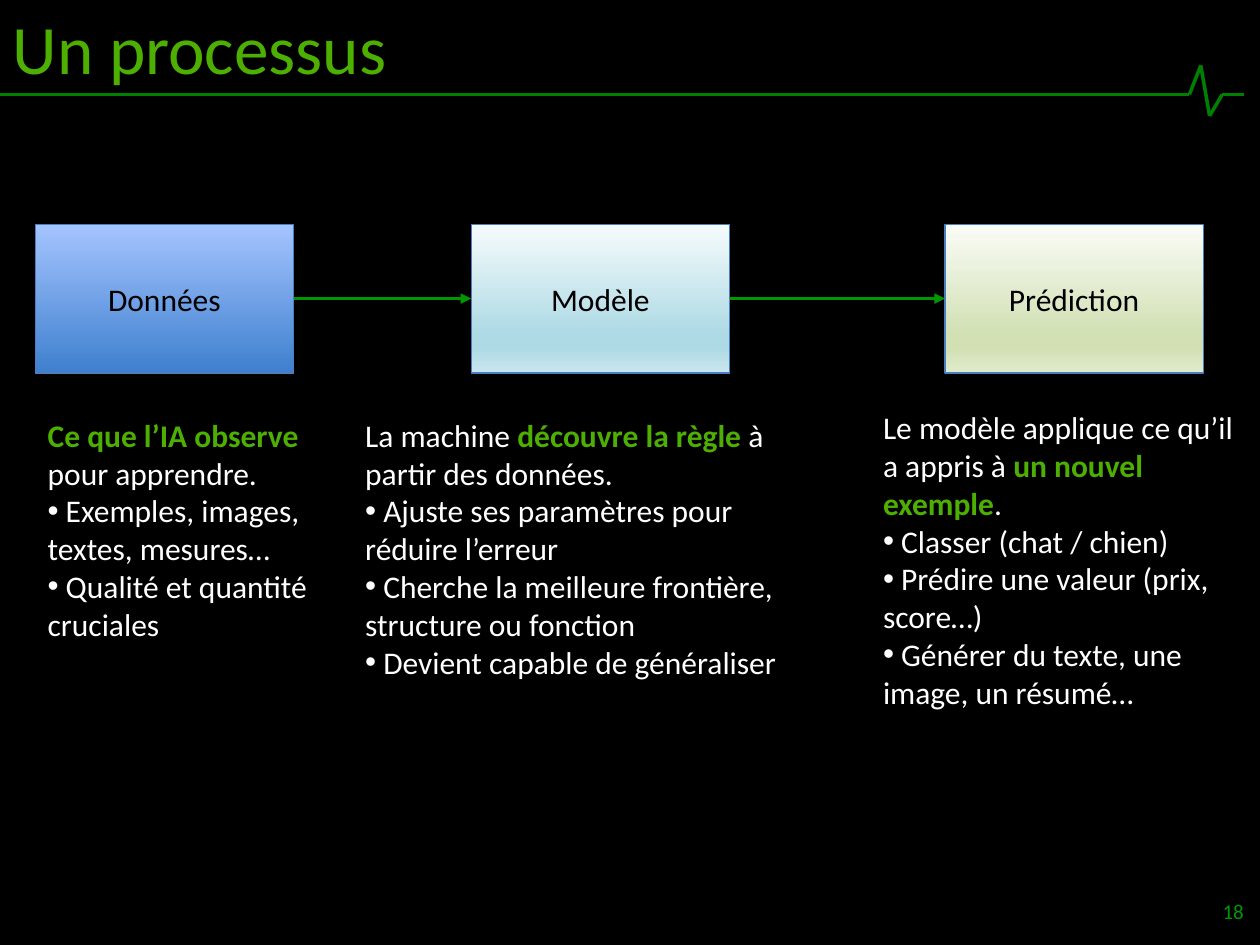
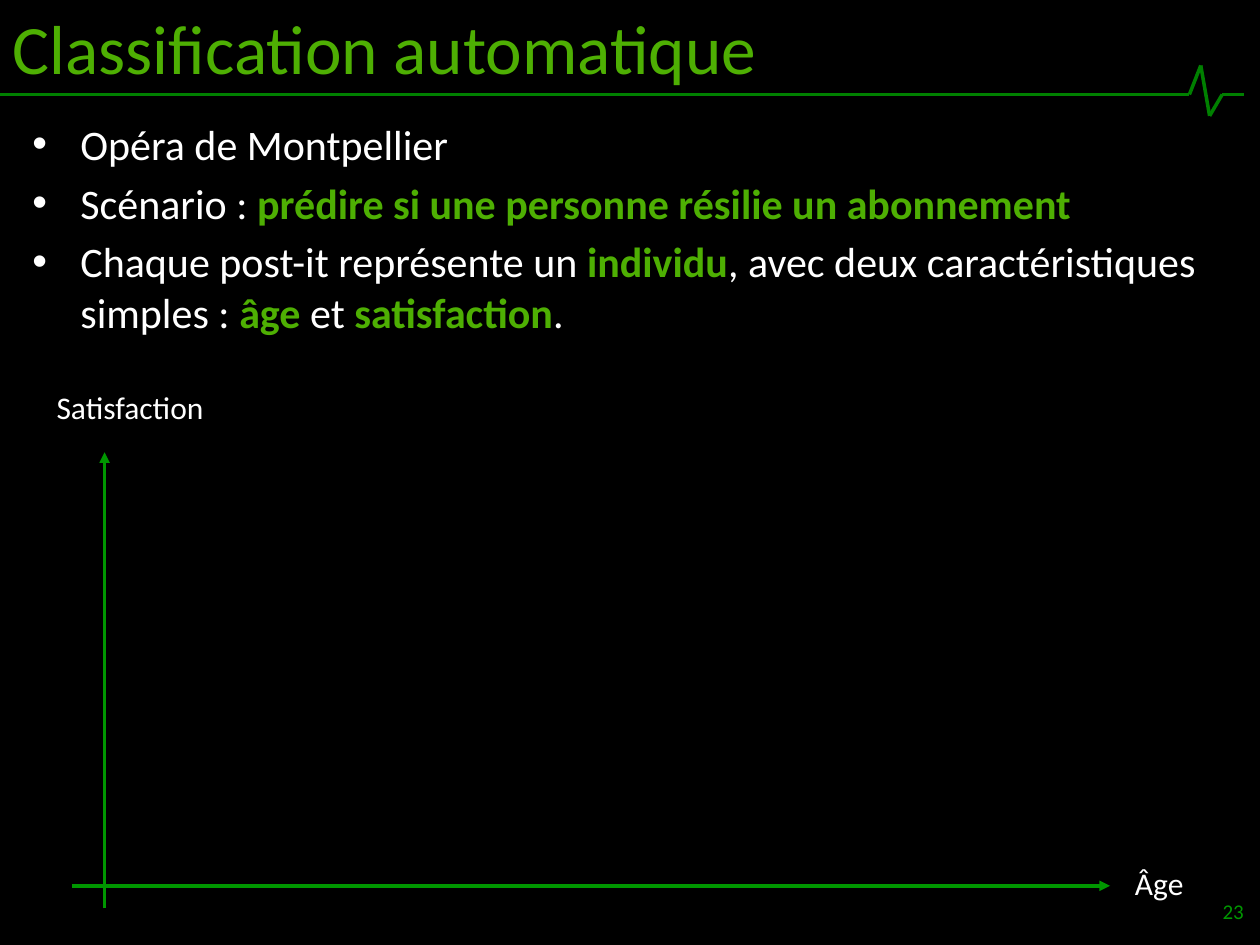
from dataclasses import dataclass
from itertools import pairwise

from lxml import etree
from pptx import Presentation
from pptx import util as u
from pptx.dml.color import RGBColor
from pptx.enum import shapes, text
from pptx.oxml.ns import qn


@dataclass(frozen=True)
class Theme:
    """Colours, font and type sizes shared by the slides."""

    background: str = "000000"
    body: str = "FFFFFF"
    accent: str = "4EAF03"
    pulse: str = "008000"
    arrow: str = "009700"
    box_line: str = "4B7EBC"
    font: str = "Calibri"
    title_size: float = 39.6
    bullet_size: float = 24
    text_size: float = 18
    number_size: float = 12


THEME = Theme()
PULSE = [(0, 0.75), (9.44, 0.75), (9.53, 0.52), (9.6, 0.92), (9.7, 0.75), (9.87, 0.75)]
STEP_TOP, STEP_WIDTH, STEP_HEIGHT = 1.78, 2.05, 1.18
STEPS = [
    ("Données", 0.28, [(0, "A4C4FF"), (100, "3F80CE")],
     (0.28, 3.25, 2.55, 1.92),
     ["**Ce que l’IA observe **pour apprendre.",
      "Exemples, images, textes, mesures…",
      "Qualité et quantité cruciales"]),
    ("Modèle", 3.74, [(0, "F6FBFC"), (74, "AEDAE5"), (83, "AEDAE5"), (100, "C9E6EE")],
     (2.8, 3.25, 3.85, 2.22),
     ["La machine **découvre la règle **à partir des données.",
      "Ajuste ses paramètres pour réduire l’erreur",
      "Cherche la meilleure frontière, structure ou fonction",
      "Devient capable de généraliser"]),
    ("Prédiction", 7.5, [(0, "FAFCF7"), (74, "D2E0B4"), (83, "D2E0B4"), (100, "E1EBCD")],
     (6.91, 3.19, 3.09, 2.52),
     ["Le modèle applique ce qu’il a appris à **un nouvel exemple**.",
      "Classer (chat / chien)",
      "Prédire une valeur (prix, score…)",
      "Générer du texte, une image, un résumé…"]),
]
SCENARIO = [
    "Opéra de Montpellier",
    "Scénario : **prédire si une personne résilie un abonnement**",
    "Chaque post-it représente un **individu**, avec deux caractéristiques "
    "simples : **âge** et **satisfaction**.",
]


def inches(*values):
    """Convert several numbers to lengths."""
    return [u.Inches(value) for value in values]


def style_font(font, size, color):
    """Give a font the shared face, a size and a colour."""
    font.name = THEME.font
    font.size = u.Pt(size)
    font.color.rgb = RGBColor.from_string(color)


def add_bullet(para, hang=0):
    """Put a round bullet before a paragraph, with an optional hanging indent."""
    properties = para._p.get_or_add_pPr()
    properties.set("marL", str(u.Inches(hang)))
    properties.set("indent", str(-u.Inches(hang)))
    etree.SubElement(properties, qn("a:buFont")).set("typeface", "Arial")
    etree.SubElement(properties, qn("a:buChar")).set("char", "•")


def write_spans(para, marked, size, color=THEME.body):
    """Write text whose parts between double asterisks are emphasised."""
    style_font(para.font, size, color)
    for index, part in enumerate(marked.split("**")):
        if part:
            span = para.add_run()
            span.text = part
            if index % 2:
                span.font.bold = True
                span.font.color.rgb = RGBColor.from_string(THEME.accent)


def add_text_box(page, area):
    """Add an empty wrapping text box and return its frame."""
    frame = page.shapes.add_textbox(*inches(*area)).text_frame
    frame.word_wrap = True
    return frame


def add_paragraphs(frame, count):
    """Return the given number of paragraphs of an empty frame."""
    return [frame.paragraphs[0]] + [frame.add_paragraph() for _ in range(count - 1)]


def add_line(page, start, end, color, arrow=False):
    """Draw a straight line without shadow, with an arrowhead if wanted."""
    line = page.shapes.add_connector(
        shapes.MSO_CONNECTOR.STRAIGHT, *inches(*start, *end))
    line.line.color.rgb = RGBColor.from_string(color)
    line.line.width = u.Pt(2)
    if arrow:
        outline = line.line._get_or_add_ln()
        etree.SubElement(outline, qn("a:tailEnd")).set("type", "triangle")
    etree.SubElement(line._element.spPr, qn("a:effectLst"))
    return line


def add_page(deck, title, number):
    """Add a slide with the shared background, title, pulse line and number."""
    page = deck.slides.add_slide(deck.slide_layouts[5])
    page.background.fill.solid()
    page.background.fill.fore_color.rgb = RGBColor.from_string(THEME.background)
    for start, end in pairwise(PULSE):
        add_line(page, start, end, THEME.pulse)

    heading = page.shapes.title
    heading.left, heading.top, heading.width, heading.height = inches(0, 0, 10, 0.75)
    frame = heading.text_frame
    frame.text = title
    frame.auto_size = text.MSO_AUTO_SIZE.NONE
    frame.vertical_anchor = text.MSO_ANCHOR.MIDDLE
    frame.paragraphs[0].alignment = text.PP_ALIGN.LEFT
    style_font(frame.paragraphs[0].font, THEME.title_size, THEME.accent)

    frame = add_text_box(page, (7.64, 7.03, 2.33, 0.4))
    frame.vertical_anchor = text.MSO_ANCHOR.MIDDLE
    frame.paragraphs[0].alignment = text.PP_ALIGN.RIGHT
    write_spans(frame.paragraphs[0], str(number), THEME.number_size, THEME.arrow)
    return page


def fill_gradient(shape, stops):
    """Fill a shape from top to bottom with the given percent and colour stops."""
    shape.fill.gradient()
    shape.fill.gradient_angle = 270
    stop_list = shape._element.spPr.find(qn("a:gradFill")).find(qn("a:gsLst"))
    for old_stop in list(stop_list):
        stop_list.remove(old_stop)
    for percent, color in stops:
        stop = etree.SubElement(stop_list, qn("a:gs"), pos=str(percent * 1000))
        etree.SubElement(stop, qn("a:srgbClr"), val=color)


def add_step(page, label, left, stops):
    """Add one labelled box of the process."""
    box = page.shapes.add_shape(
        shapes.MSO_SHAPE.RECTANGLE, *inches(left, STEP_TOP, STEP_WIDTH, STEP_HEIGHT))
    box.shadow.inherit = False
    fill_gradient(box, stops)
    box.line.color.rgb = RGBColor.from_string(THEME.box_line)
    box.line.width = u.Pt(0.75)
    box.text_frame.vertical_anchor = text.MSO_ANCHOR.MIDDLE
    para = box.text_frame.paragraphs[0]
    para.alignment = text.PP_ALIGN.CENTER
    write_spans(para, label, THEME.text_size, THEME.background)
    return box


def add_explanation(page, area, lines):
    """Add a lead sentence followed by bulleted points."""
    paras = add_paragraphs(add_text_box(page, area), len(lines))
    write_spans(paras[0], lines[0], THEME.text_size)
    for para, line in zip(paras[1:], lines[1:]):
        add_bullet(para)
        write_spans(para, f" {line}", THEME.text_size)


def add_scenario(page, area, lines):
    """Add the large bulleted list under the title."""
    paras = add_paragraphs(add_text_box(page, area), len(lines))
    for index, (para, line) in enumerate(zip(paras, lines)):
        if index:
            para.space_before = u.Pt(0.2 * THEME.bullet_size)
        add_bullet(para, hang=0.38)
        write_spans(para, line, THEME.bullet_size)


def add_axes(page, left, top, width, height):
    """Add the two labelled axes inside the given box."""
    right, bottom = left + width, top + height
    axis_x, axis_y = left + 0.26, bottom - 0.18
    add_line(page, (left, axis_y), (right, axis_y), THEME.arrow, arrow=True)
    add_line(page, (axis_x, bottom), (axis_x, top), THEME.arrow, arrow=True)
    labels = [("Satisfaction", left - 0.22, top - 0.56, 5.12),
              ("Âge", right + 0.1, axis_y - 0.22, 1)]
    for label, label_left, label_top, label_width in labels:
        frame = add_text_box(page, (label_left, label_top, label_width, 0.4))
        write_spans(frame.paragraphs[0], label, THEME.text_size)


def build_process(deck):
    """Build the slide that shows the three steps of the process."""
    page = add_page(deck, "Un processus", 18)
    boxes = [add_step(page, label, left, stops) for label, left, stops, _, _ in STEPS]
    for source, target in pairwise(boxes):
        arrow = add_line(page, (0, 0), (1, 0), THEME.arrow, arrow=True)
        arrow.begin_connect(source, 3)
        arrow.end_connect(target, 1)
    for _, _, _, area, lines in STEPS:
        add_explanation(page, area, lines)


def build_classification(deck):
    """Build the slide with the scenario and the empty plot."""
    page = add_page(deck, "Classification automatique", 23)
    add_scenario(page, (0.16, 0.89, 9.7, 2), SCENARIO)
    add_axes(page, 0.57, 3.59, 8.24, 3.62)


def main():
    """Create the deck and save it."""
    deck = Presentation()
    deck.slide_width, deck.slide_height = inches(10, 7.5)
    build_process(deck)
    build_classification(deck)
    deck.save("out.pptx")


if __name__ == "__main__":
    main()
